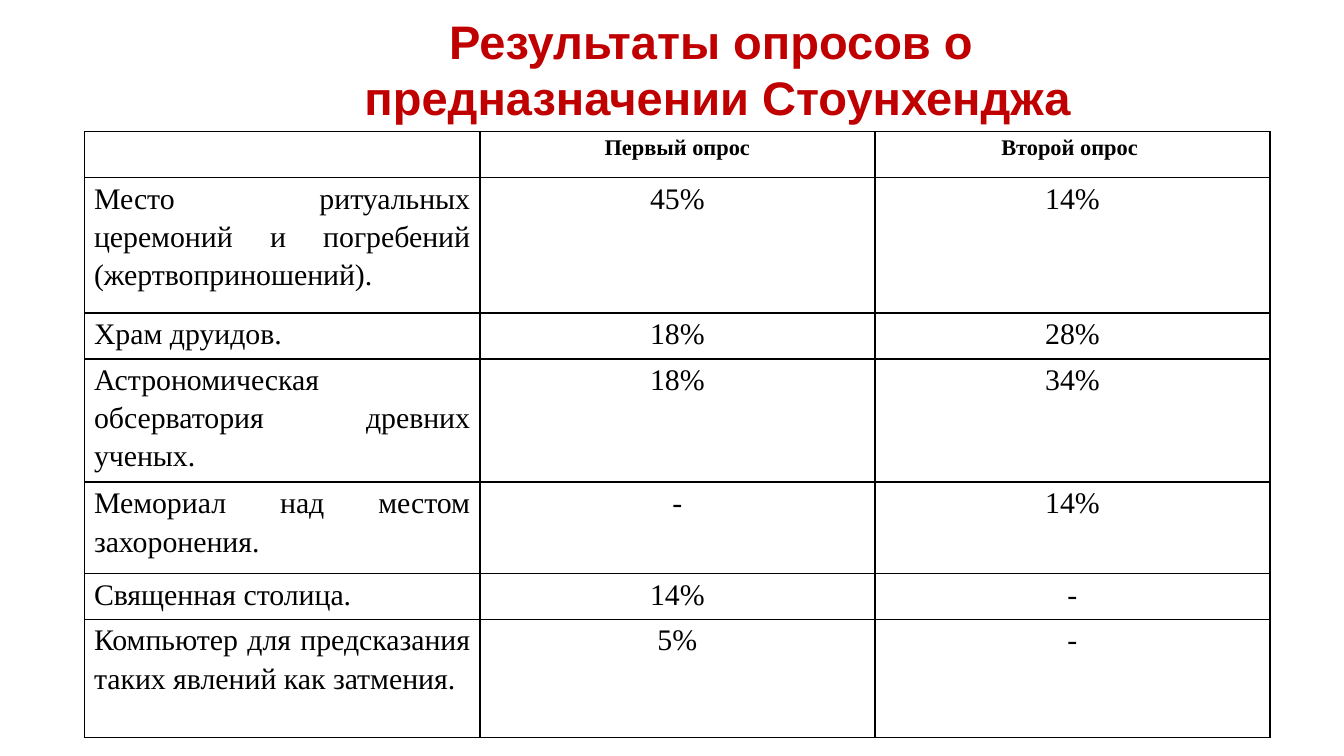
"""Build a slide with a table comparing two polls about the purpose of Stonehenge."""
from dataclasses import dataclass

from lxml.etree import SubElement
from pptx import Presentation
from pptx.dml.color import RGBColor
from pptx.enum.text import MSO_ANCHOR, PP_ALIGN
from pptx.oxml.ns import qn
from pptx.slide import Slide
from pptx.table import _Cell
from pptx.util import Inches, Pt


@dataclass(frozen=True)
class Theme:
    title_font: str = "Arial"
    table_font: str = "Times New Roman"
    title_color: str = "C00000"
    ink: str = "000000"
    title_size: float = 25.2
    title_leading: float = 30
    header_size: float = 12
    body_size: float = 16
    table_leading: float = 1.15
    border_width: float = 1


@dataclass(frozen=True)
class PollRow:
    height: float
    answer: str
    first: str
    second: str
    header: bool = False


THEME = Theme()
SLIDE_WIDTH = 10
TITLE_LINES = ("Результаты опросов о ", "предназначении Стоунхенджа")
COLUMN_WIDTH = 2.94
ROWS = (
    PollRow(0.34, "", "Первый опрос", "Второй опрос ", header=True),
    PollRow(1.01, "Место ритуальных церемоний и погребений (жертвоприношений).", "45%", "14%"),
    PollRow(0.34, "Храм друидов.", "18%", "28%"),
    PollRow(0.88, "Астрономическая обсерватория древних ученых.", "18%", "34%"),
    PollRow(0.68, "Мемориал над местом захоронения.", "-", "14%"),
    PollRow(0.34, "Священная столица.", "14%", "-"),
    PollRow(0.88, "Компьютер для предсказания таких явлений как затмения.", "5%", "-"),
)


def add_run(paragraph, text: str, font: str, size: float, color: str, bold: bool) -> None:
    run = paragraph.add_run()
    run.text = text
    run.font.name = font
    run.font.size = Pt(size)
    run.font.bold = bold
    run.font.color.rgb = RGBColor.from_string(color)


def add_title(slide: Slide) -> None:
    shape = slide.shapes.add_textbox(Inches(0.68), Inches(0), Inches(9.32), Inches(1.27))
    frame = shape.text_frame
    frame.word_wrap = True
    frame.vertical_anchor = MSO_ANCHOR.TOP
    frame.margin_left = frame.margin_right = Inches(0.1)
    frame.margin_top = frame.margin_bottom = Inches(0.1)
    paragraph = frame.paragraphs[0]
    paragraph.alignment = PP_ALIGN.CENTER
    paragraph.line_spacing = Pt(THEME.title_leading)
    for index, line in enumerate(TITLE_LINES):
        if index:
            paragraph.add_line_break()
        add_run(paragraph, line, THEME.title_font, THEME.title_size, THEME.title_color, True)


def add_borders(cell: _Cell) -> None:
    properties = cell._tc.get_or_add_tcPr()
    for side in ("a:lnL", "a:lnR", "a:lnT", "a:lnB"):
        line = SubElement(properties, qn(side), w=str(Pt(THEME.border_width)))
        fill = SubElement(line, qn("a:solidFill"))
        SubElement(fill, qn("a:srgbClr"), val=THEME.ink)


def fill_cell(cell: _Cell, text: str, header: bool, alignment: PP_ALIGN) -> None:
    add_borders(cell)
    cell.fill.background()
    cell.margin_left = cell.margin_right = Inches(0.07)
    cell.margin_top = cell.margin_bottom = Inches(0)
    paragraph = cell.text_frame.paragraphs[0]
    size = THEME.header_size if header else THEME.body_size
    if text:
        paragraph.alignment = alignment
        paragraph.line_spacing = THEME.table_leading
        add_run(paragraph, text, THEME.table_font, size, THEME.ink, header)
    SubElement(paragraph._p, qn("a:endParaRPr"), sz=str(size * 100))


def add_poll_table(slide: Slide) -> None:
    height = sum(row.height for row in ROWS)
    table = slide.shapes.add_table(
        len(ROWS), 3, Inches(0.63), Inches(0.98), Inches(3 * COLUMN_WIDTH), Inches(height)
    ).table
    table.first_row = False
    table.horz_banding = False
    for column in table.columns:
        column.width = Inches(COLUMN_WIDTH)
    for table_row, row in zip(table.rows, ROWS):
        table_row.height = Inches(row.height)
        texts = (row.answer, row.first, row.second)
        alignments = (PP_ALIGN.JUSTIFY, PP_ALIGN.CENTER, PP_ALIGN.CENTER)
        for cell, text, alignment in zip(table_row.cells, texts, alignments):
            fill_cell(cell, text, row.header, alignment)


def main() -> None:
    presentation = Presentation()
    presentation.slide_width = Inches(SLIDE_WIDTH)
    presentation.slide_height = Inches(SLIDE_WIDTH * 9 / 16)
    slide = presentation.slides.add_slide(presentation.slide_layouts[6])
    add_title(slide)
    add_poll_table(slide)
    presentation.save("out.pptx")


if __name__ == "__main__":
    main()
